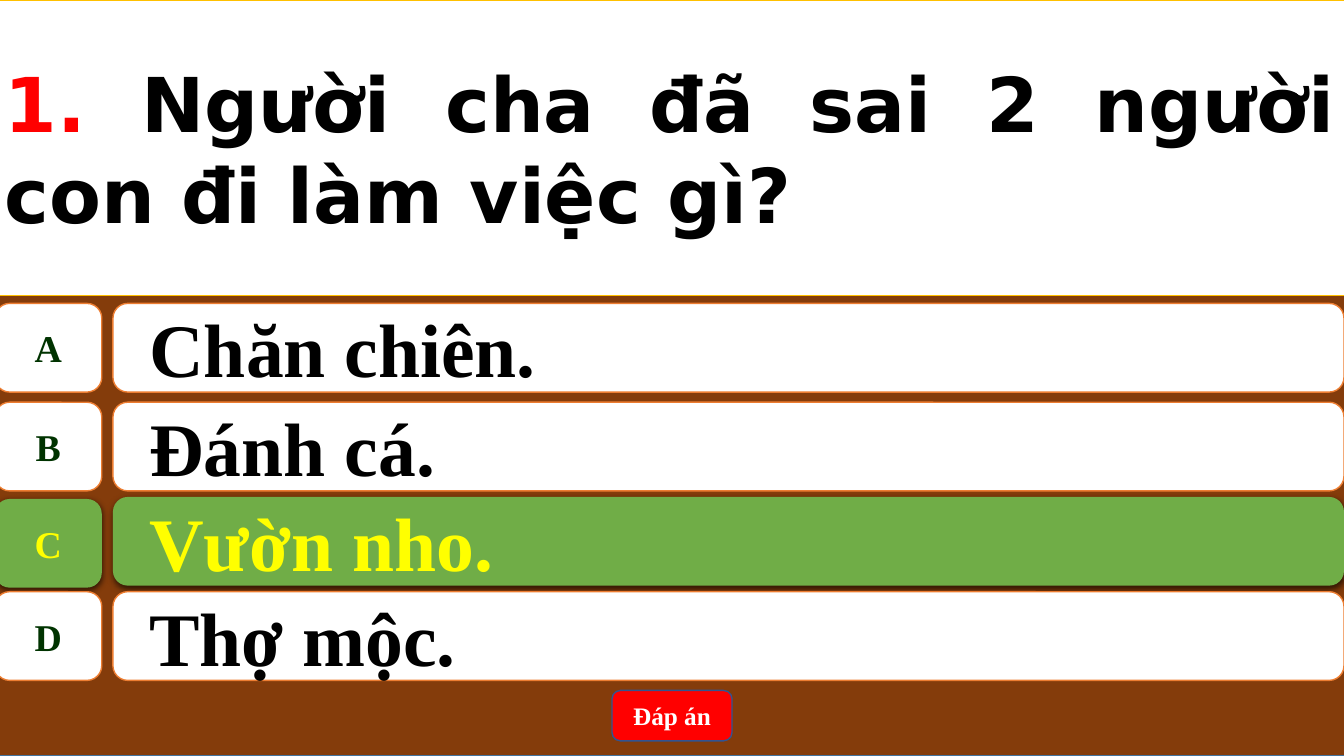
"""Build a quiz slide with one question, four answers and an answer button."""
from lxml.etree import SubElement
from pptx import Presentation
from pptx.dml.color import RGBColor
from pptx.enum.shapes import MSO_SHAPE
from pptx.enum.text import MSO_ANCHOR, PP_ALIGN
from pptx.oxml.ns import qn
from pptx.util import Inches, Pt

BROWN = RGBColor(0x84, 0x3C, 0x0B)
BLUE = RGBColor(0x43, 0x73, 0x9E)
NAVY = RGBColor(0x32, 0x54, 0x91)
WHITE = RGBColor(0xFF, 0xFF, 0xFF)
BLACK = RGBColor(0x00, 0x00, 0x00)
ORANGE = RGBColor(0xED, 0x7D, 0x31)
GOLD = RGBColor(0xFF, 0xC0, 0x00)
RED = RGBColor(0xFF, 0x00, 0x00)
GREEN = RGBColor(0x70, 0xAD, 0x47)
FOREST = RGBColor(0x00, 0x33, 0x00)
YELLOW = RGBColor(0xFF, 0xFF, 0x00)

CELL = Inches(0.1)
LEFT, WIDE = -0.5, 133.9
ANSWERS = [
    ("A", "Chăn chiên.", 30.1),
    ("B", "Đánh cá.", 39.9),
    ("C", "Vườn nho.", 49.3),
    ("D", "Thợ mộc.", 58.7),
]
RIGHT = "C"


class Quiz:
    """Hold the text style and the slide, on a grid of tenths of an inch."""

    def __init__(self, deck, font, title):
        self.slide = deck.slides.add_slide(deck.slide_layouts[6])
        self.font = font
        self.title = title

    def box(self, kind, area, fill, line=None, width=1):
        place = [round(part * CELL) for part in area]
        shape = self.slide.shapes.add_shape(kind, *place)
        shape.shadow.inherit = False
        shape.fill.solid()
        shape.fill.fore_color.rgb = fill
        if line is None:
            shape.line.fill.background()
        else:
            shape.line.color.rgb = line
            shape.line.width = Pt(width)
        return shape

    def shade(self, shape):
        effect = shape._element.spPr.find(qn("a:effectLst"))
        outer = SubElement(effect, qn("a:outerShdw"), blurRad=str(Pt(4.5)),
                           dist=str(Pt(1.5)), dir="5400000", rotWithShape="0")
        color = SubElement(outer, qn("a:srgbClr"), val=str(BLACK))
        SubElement(color, qn("a:alpha"), val="63000")

    def label(self, shape, parts, size, align=PP_ALIGN.CENTER, font=None):
        frame = shape.text_frame
        frame.word_wrap = True
        frame.vertical_anchor = MSO_ANCHOR.MIDDLE
        para = frame.paragraphs[0]
        para.alignment = align
        for text, color in parts:
            run = para.add_run()
            run.text = text
            run.font.name = font or self.font
            run.font.size = Pt(size)
            run.font.bold = True
            run.font.color.rgb = color
        return para

    def ground(self):
        self.box(MSO_SHAPE.RECTANGLE, (LEFT, 0, WIDE, 75), BROWN, BLUE)

    def ask(self, number, text):
        panel = self.box(MSO_SHAPE.RECTANGLE, (LEFT, 0, WIDE, 29.3),
                         WHITE, GOLD, 0.5)
        self.label(panel, [(number, RED), (text, BLACK)], 54,
                   PP_ALIGN.JUSTIFY, self.title)

    def answer(self, letter, text, top, chosen):
        fill, line = (GREEN, None) if chosen else (WHITE, ORANGE)
        drop = 0.2 if chosen else 0
        key = self.box(MSO_SHAPE.FLOWCHART_ALTERNATE_PROCESS,
                       (LEFT, top + drop, 10.6, 8.8), fill, line)
        bar = self.box(MSO_SHAPE.ROUNDED_RECTANGLE,
                       (11.2, top, 122.1, 8.8), fill, line)
        self.label(key, [(letter, YELLOW if chosen else FOREST)], 27)
        key.text_frame.word_wrap = False
        para = self.label(bar, [(text, YELLOW if chosen else BLACK)], 54,
                          PP_ALIGN.LEFT)
        para.level = 1
        props = para._p.get_or_add_pPr()
        props.set("marL", str(Inches(0.5)))
        props.set("indent", str(Inches(-0.28)))
        if chosen:
            self.shade(key)
            self.shade(bar)

    def button(self, text):
        shape = self.box(MSO_SHAPE.ROUNDED_RECTANGLE,
                         (60.7, 68.5, 11.9, 5), RED, NAVY)
        self.label(shape, [(text, WHITE)], 18)


def main():
    deck = Presentation()
    deck.slide_width = Inches(13.33)
    deck.slide_height = Inches(7.5)
    quiz = Quiz(deck, "Times New Roman", "DejaVu Sans")
    quiz.ground()
    for letter, text, top in ANSWERS:
        quiz.answer(letter, text, top, letter == RIGHT)
    quiz.button("Đáp án")
    quiz.ask("1. ", "Người cha đã sai 2 người con đi làm việc gì?")
    deck.save("out.pptx")


if __name__ == "__main__":
    main()
